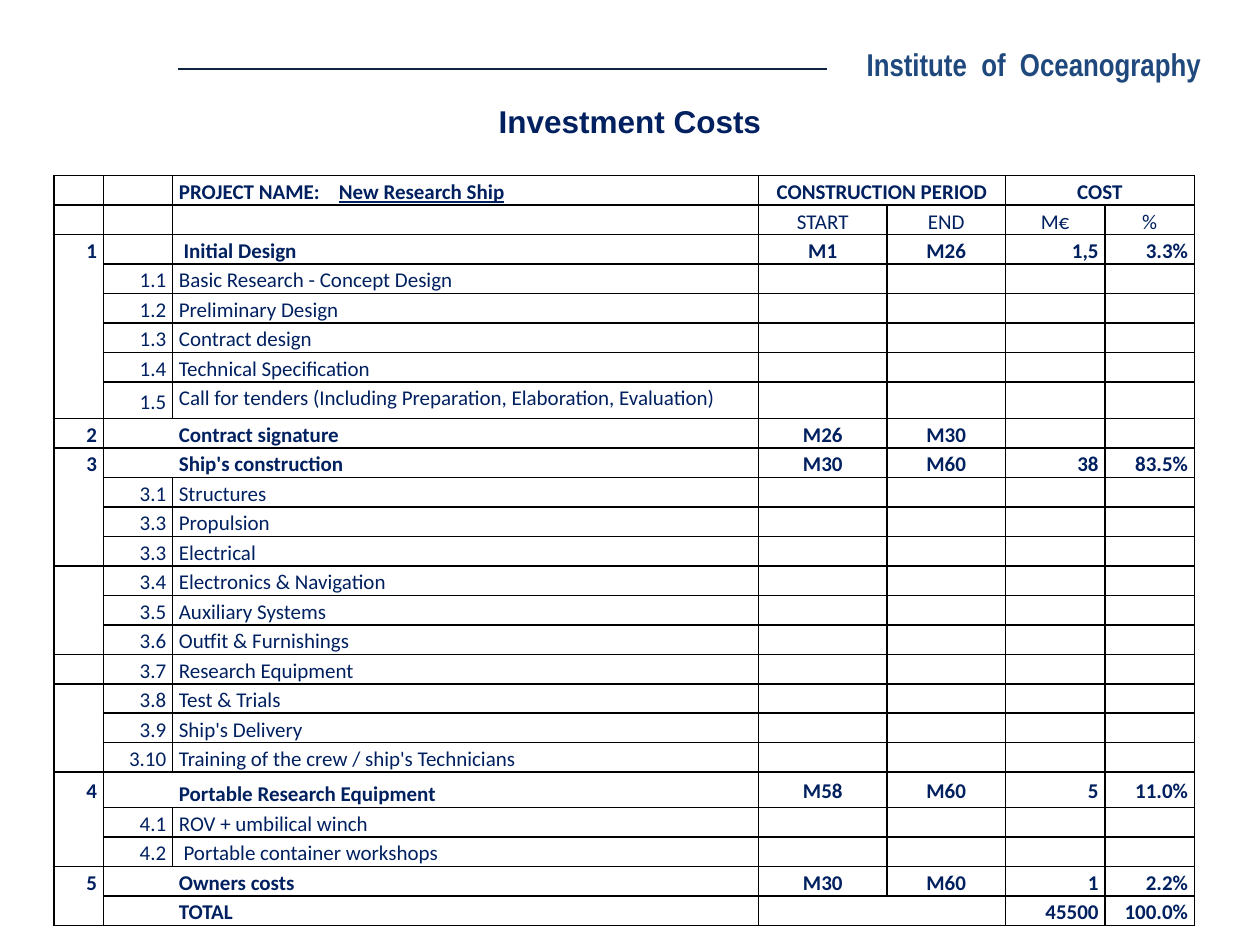
from lxml import etree
from pptx import Presentation
from pptx import util as u
from pptx.dml.color import RGBColor
from pptx.enum import shapes, text
from pptx.oxml.ns import qn

NAVY = RGBColor(0x00, 0x20, 0x60)
BLUE = RGBColor(0x1F, 0x49, 0x7D)
INK = RGBColor(0x0F, 0x24, 0x3E)
BLACK = RGBColor(0, 0, 0)
LEFT, CENTER, RIGHT = text.PP_ALIGN.LEFT, text.PP_ALIGN.CENTER, text.PP_ALIGN.RIGHT
TOP, MIDDLE, BOTTOM = text.MSO_ANCHOR.TOP, text.MSO_ANCHOR.MIDDLE, text.MSO_ANCHOR.BOTTOM

# Number, item, and for sections: start, end, M€, %
SECTIONS = [
    ("1", " Initial Design", "M1", "M26", "1,5", "3.3%"),
    ("1.1", "Basic Research - Concept Design"),
    ("1.2", "Preliminary Design"),
    ("1.3", "Contract design"),
    ("1.4", "Technical Specification"),
    ("1.5", "Call for tenders (Including Preparation, Elaboration, Evaluation)"),
    ("2", "Contract signature", "M26", "M30", "", ""),
    ("3", "Ship's construction", "M30", "M60", "38", "83.5%"),
    ("3.1", "Structures"),
    ("3.3", "Propulsion"),
    ("3.3", "Electrical"),
    ("3.4", "Electronics & Navigation"),
    ("3.5", "Auxiliary Systems"),
    ("3.6", "Outfit & Furnishings"),
    ("3.7", "Research Equipment"),
    ("3.8", "Test & Trials"),
    ("3.9", "Ship's Delivery"),
    ("3.10", "Training of the crew / ship's Technicians"),
    ("4", "Portable Research Equipment", "M58", "M60", "5", "11.0%"),
    ("4.1", "ROV + umbilical winch"),
    ("4.2", " Portable container workshops"),
    ("5", "Owners costs", "M30", "M60", "1", "2.2%"),
    ("", "TOTAL", "", "", "45500", "100.0%"),
]
HEADERS = 2
COLUMNS = [0.039, 0.055, 0.465, 0.102, 0.094, 0.079, 0.071]  # shares of the width
ALIGNS = [RIGHT, RIGHT, LEFT, CENTER, CENTER, RIGHT, RIGHT]
ROW = 0.0312  # share of the height
TALL_ROWS = {"1.5": 0.0387, "4": 0.0373}
GROUP_STARTS = {0, 1, 2, 8, 9, 13, 16, 17, 20, 23}  # rows that open a box in column 0
TOP_ITEMS = {"1.5", "3.10"}


class Deck:
    """Style and current slide; lengths are shares of the slide's size."""

    def __init__(self, font="Calibri", size=12, color=NAVY):
        self.prs = Presentation()
        self.prs.slide_width, self.prs.slide_height = u.Inches(10), u.Inches(7.5)
        self.s = self.prs.slides.add_slide(self.prs.slide_layouts[6])
        self.font, self.size, self.color = font, size, color

    def x(self, share):
        return int(self.prs.slide_width * share)

    def y(self, share):
        return int(self.prs.slide_height * share)

    def run(self, p, words, bold=False, underline=None, font=None, size=None, color=None):
        r = p.add_run()
        r.text = words
        f = r.font
        f.name, f.size = font or self.font, u.Pt(size or self.size)
        f.bold, f.underline = bold, underline
        f.color.rgb = color or self.color

    def rule(self, x1, x2, y, color, width):
        sp = self.s.shapes.add_connector(shapes.MSO_CONNECTOR.STRAIGHT,
                                         self.x(x1), self.y(y), self.x(x2), self.y(y))
        sp.line.color.rgb, sp.line.width = color, u.Pt(width)
        etree.SubElement(sp._element.spPr, qn("a:effectLst"))

    def label(self, x, y, w, h, words, anchor, **style):
        sp = self.s.shapes.add_textbox(self.x(x), self.y(y), self.x(w), self.y(h))
        tf = sp.text_frame
        tf.word_wrap, tf.vertical_anchor = True, anchor
        p = tf.paragraphs[0]
        p.alignment = CENTER
        self.run(p, words, bold=True, **style)

    def table(self, x, y, columns, rows):
        gf = self.s.shapes.add_table(len(rows), len(columns), self.x(x), self.y(y),
                                     self.x(sum(columns)), self.y(sum(rows)))
        tbl = gf.table
        tbl.first_row = tbl.horz_banding = False
        for col, share in zip(tbl.columns, columns):
            col.width = self.x(share)
        for row, share in zip(tbl.rows, rows):
            row.height = self.y(share)
        return tbl

    def cell(self, cell, runs, align, anchor, sides, tab=None):
        cell.margin_left = cell.margin_right = u.Inches(0.05)
        cell.margin_top = cell.margin_bottom = 0
        cell.vertical_anchor = anchor
        p = cell.text_frame.paragraphs[0]
        p.alignment, p.line_spacing = align, 1.15
        if tab:
            tabs = etree.SubElement(p._p.get_or_add_pPr(), qn("a:tabLst"))
            etree.SubElement(tabs, qn("a:tab"), pos=str(u.Inches(tab)), algn="l")
        for words, style in runs:
            self.run(p, words, **style)
        if not runs:
            etree.SubElement(p._p, qn("a:endParaRPr"), sz=str(self.size * 100))
        self.borders(cell, sides)
        cell.fill.background()

    def borders(self, cell, sides):
        tcPr = cell._tc.get_or_add_tcPr()
        for side in "LRTB":
            ln = etree.SubElement(tcPr, qn("a:ln" + side), w=str(u.Pt(1)))
            if side in sides:
                fill = etree.SubElement(ln, qn("a:solidFill"))
                etree.SubElement(fill, qn("a:srgbClr"), val=str(BLACK))
            else:
                etree.SubElement(ln, qn("a:noFill"))


def cell_sides(row, col, open_number, is_total):
    """Letters of the sides that carry a line."""
    hidden = ""
    if col == 0:
        hidden += "" if row in GROUP_STARTS else "T"
        hidden += "B" if row + 1 < HEADERS + len(SECTIONS) and row + 1 not in GROUP_STARTS else ""
    if open_number and col in (1, 2):
        hidden += "R" if col == 1 else "L"
    if is_total and col in (3, 4):
        hidden += "R" if col == 3 else "L"
    return set("LRTB") - set(hidden)


def cost_table(d):
    heights = [ROW] * HEADERS + [TALL_ROWS.get(rec[0], ROW) for rec in SECTIONS]
    tbl = d.table(0.043, 0.186, COLUMNS, heights)

    # Two heading rows
    bold = {"bold": True}
    heads = [
        {2: [("PROJECT NAME:\t", bold), ("New Research Ship", {"bold": True, "underline": True})],
         3: [("CONSTRUCTION PERIOD", bold)], 5: [("COST", bold)]},
        {3: [("START", {})], 4: [("END", {})], 5: [("M€", {})], 6: [("%", {})]},
    ]
    for row, head in enumerate(heads):
        for col in range(len(COLUMNS)):
            name = col == 2
            d.cell(tbl.cell(row, col), head.get(col, []), LEFT if name else CENTER,
                   BOTTOM if name else MIDDLE, "LRTB", tab=1.27 if name and row == 0 else None)
    for col in (3, 5):
        tbl.cell(0, col).merge(tbl.cell(0, col + 1))

    # Sections and their items
    for row, (number, item, *figures) in enumerate(SECTIONS, HEADERS):
        section, total = bool(figures), item == "TOTAL"
        numbers = [number, ""] if section else ["", number]
        values = numbers + [item] + (figures or [""] * 4)
        for col, words in enumerate(values):
            runs = [(words, {"bold": section})] if words else []
            anchor = MIDDLE
            if col == 2:
                anchor = TOP if number in TOP_ITEMS else BOTTOM
            sides = cell_sides(row, col, section and number != "1", total)
            d.cell(tbl.cell(row, col), runs, ALIGNS[col], anchor, sides)


def main():
    d = Deck()
    # Header band
    d.rule(0.141, 0.656, 0.073, INK, 1.5)
    d.label(0.641, 0, 0.359, 0.136, "Institute  of  Oceanography", MIDDLE,
            font="Arial Narrow", size=18, color=BLUE)
    # Costs
    cost_table(d)
    # Title
    d.label(0, 0.101, 1, 0.053, "Investment Costs", TOP, font="Arial", size=18)
    d.prs.save("out.pptx")


if __name__ == "__main__":
    main()
